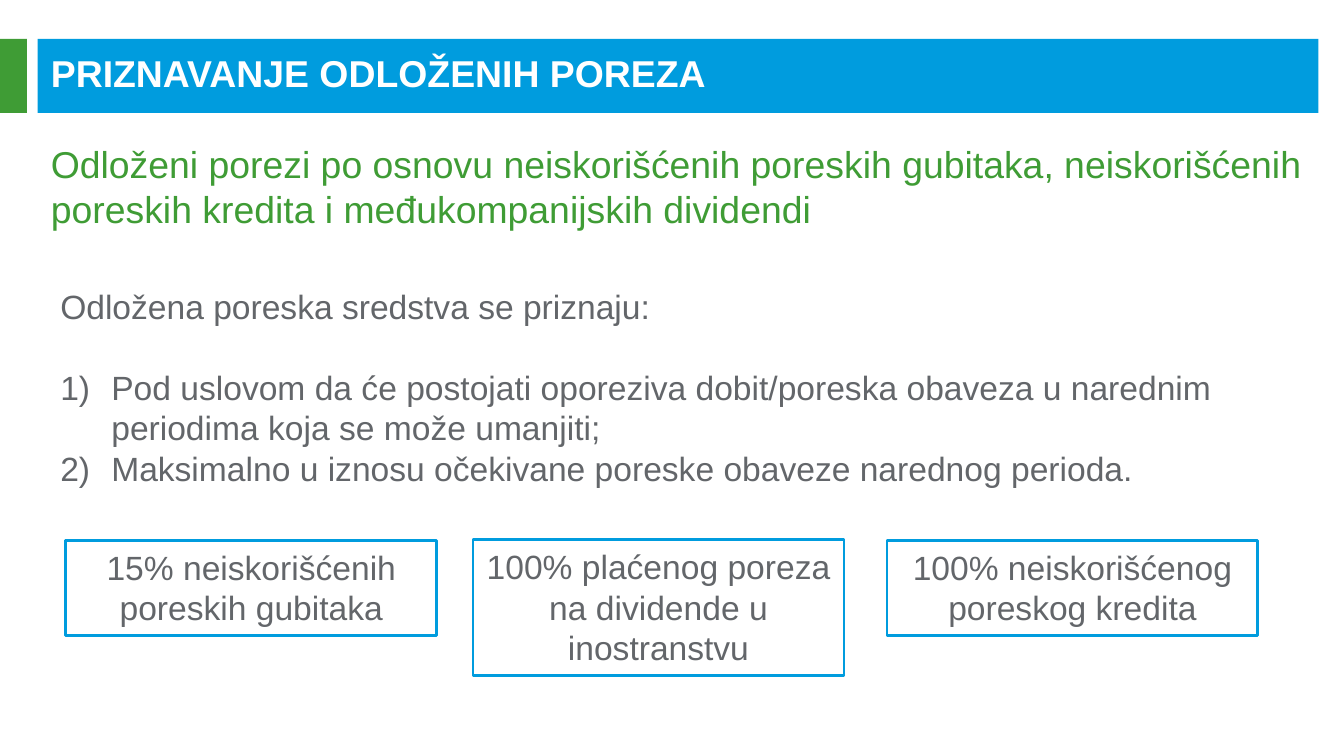
from dataclasses import dataclass
from pptx import Presentation
from pptx.dml.color import RGBColor
from pptx.enum.shapes import MSO_SHAPE
from pptx.enum.text import MSO_ANCHOR, PP_ALIGN
from pptx.oxml.xmlchemy import OxmlElement
from pptx.shapes.autoshape import Shape
from pptx.slide import Slide
from pptx.text.text import _Paragraph as Para
from pptx.util import Inches, Pt

WIDE = 10
HIGH = WIDE * 9 / 16


@dataclass(frozen=True)
class Theme:
    """Colours, type sizes and line values of the slide."""
    blue: str = "009CDE"
    green: str = "3F9C35"
    gray: str = "63666A"
    white: str = "FFFFFF"
    font: str = "Arial"
    head: int = 20
    text: int = 18
    edge: float = 1.5


@dataclass(frozen=True)
class Area:
    """A rectangle in percent of the slide's width and height."""
    left: float
    top: float
    width: float
    height: float

    def lengths(self) -> tuple[int, int, int, int]:
        """Return the rectangle as slide lengths."""
        return (Inches(self.left * WIDE / 100), Inches(self.top * HIGH / 100),
                Inches(self.width * WIDE / 100), Inches(self.height * HIGH / 100))


@dataclass(frozen=True)
class Line:
    """A paragraph with its look."""
    text: str
    size: int
    tint: str
    bold: bool = False
    item: bool = False
    gap: float = 0
    align: PP_ALIGN = PP_ALIGN.LEFT


@dataclass(frozen=True)
class Card:
    """A framed note: left, top and height in percent."""
    left: float
    top: float
    height: float
    text: str


LOOK = Theme()
SPAN = 27.6
BARS = [(Area(2.8, 5.16, 95.3, 9.78), LOOK.blue),
        (Area(0, 5.16, 2, 9.78), LOOK.green)]
TITLE = Line("PRIZNAVANJE ODLOŽENIH POREZA", LOOK.head, LOOK.white, bold=True)
TOPIC = Line("Odloženi porezi po osnovu neiskorišćenih poreskih gubitaka, "
             "neiskorišćenih poreskih kredita i međukompanijskih dividendi",
             LOOK.head, LOOK.green)
RULES = [
    Line("Odložena poreska sredstva se priznaju:", LOOK.text, LOOK.gray),
    Line("Pod uslovom da će postojati oporeziva dobit/poreska obaveza u narednim "
         "periodima koja se može umanjiti;", LOOK.text, LOOK.gray, item=True, gap=21.6),
    Line("Maksimalno u iznosu očekivane poreske obaveze narednog perioda.",
         LOOK.text, LOOK.gray, item=True),
]
CARDS = [
    Card(4.9, 71.47, 12.62, "15% neiskorišćenih poreskih gubitaka"),
    Card(66, 71.47, 12.62, "100% neiskorišćenog poreskog kredita"),
    Card(35.2, 71.38, 17.96, "100% plaćenog poreza na dividende u inostranstvu"),
]


def number(para: Para) -> None:
    """Turn a paragraph into a numbered item with a hanging indent."""
    props = para._p.get_or_add_pPr()
    props.set("marL", str(Inches(0.38)))
    props.set("indent", str(-Inches(0.38)))
    mark = OxmlElement("a:buAutoNum")
    mark.set("type", "arabicParenR")
    props.append(mark)


def write(shape: Shape, lines: list[Line], anchor: MSO_ANCHOR = MSO_ANCHOR.TOP) -> None:
    """Write paragraphs into a shape."""
    frame = shape.text_frame
    frame.word_wrap = True
    frame.vertical_anchor = anchor
    for spot, line in enumerate(lines):
        para = frame.add_paragraph() if spot else frame.paragraphs[0]
        para.alignment = line.align
        if line.gap:
            para.space_before = Pt(line.gap)
        if line.item:
            number(para)
        run = para.add_run()
        run.text = line.text
        run.font.name = LOOK.font
        run.font.size = Pt(line.size)
        run.font.bold = line.bold
        run.font.color.rgb = RGBColor.from_string(line.tint)


def block(slide: Slide, area: Area) -> Shape:
    """Add a plain rectangle with neither fill nor line."""
    shape = slide.shapes.add_shape(MSO_SHAPE.RECTANGLE, *area.lengths())
    shape.shadow.inherit = False
    shape.fill.background()
    shape.line.fill.background()
    return shape


def bar(slide: Slide, area: Area, tint: str) -> None:
    """Add a filled bar."""
    shape = block(slide, area)
    shape.fill.solid()
    shape.fill.fore_color.rgb = RGBColor.from_string(tint)


def label(slide: Slide, area: Area, lines: list[Line],
          anchor: MSO_ANCHOR = MSO_ANCHOR.TOP) -> None:
    """Add a text box."""
    write(slide.shapes.add_textbox(*area.lengths()), lines, anchor)


def note(slide: Slide, card: Card) -> None:
    """Add a framed note."""
    shape = block(slide, Area(card.left, card.top, SPAN, card.height))
    shape.line.color.rgb = RGBColor.from_string(LOOK.blue)
    shape.line.width = Pt(LOOK.edge)
    write(shape, [Line(card.text, LOOK.text, LOOK.gray, align=PP_ALIGN.CENTER)])


def main() -> None:
    """Build and save the slide."""
    deck = Presentation()
    deck.slide_width, deck.slide_height = Inches(WIDE), Inches(HIGH)
    slide = deck.slides.add_slide(deck.slide_layouts[6])
    for area, tint in BARS:
        bar(slide, area, tint)
    label(slide, Area(2.8, 6.93, 94.5, 5.33), [TITLE], MSO_ANCHOR.MIDDLE)
    label(slide, Area(2.8, 17.78, 95.3, 9.24), [TOPIC])
    label(slide, Area(3.5, 36.98, 93.9, 28.8), RULES)
    for card in CARDS:
        note(slide, card)
    deck.save("out.pptx")


if __name__ == "__main__":
    main()
